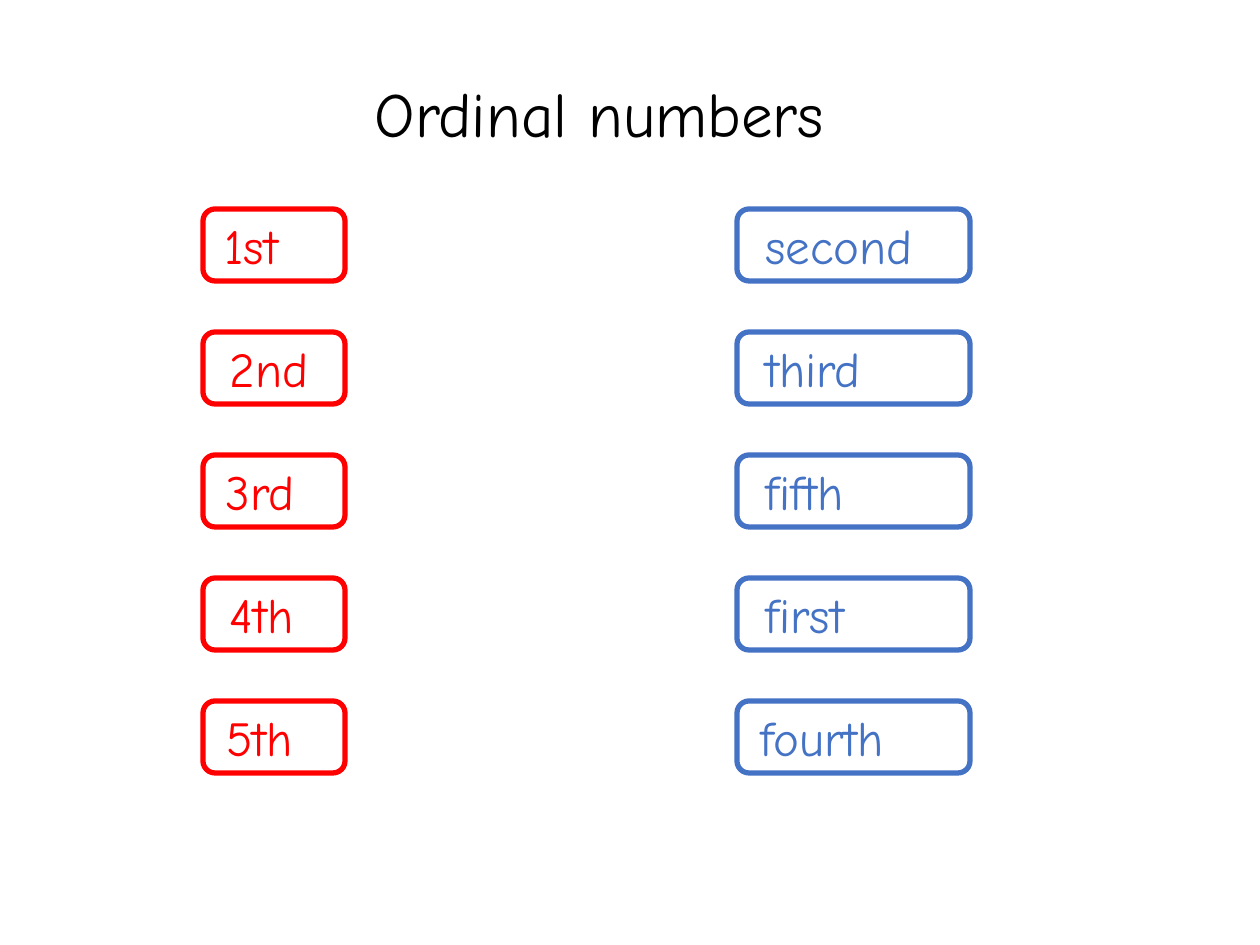
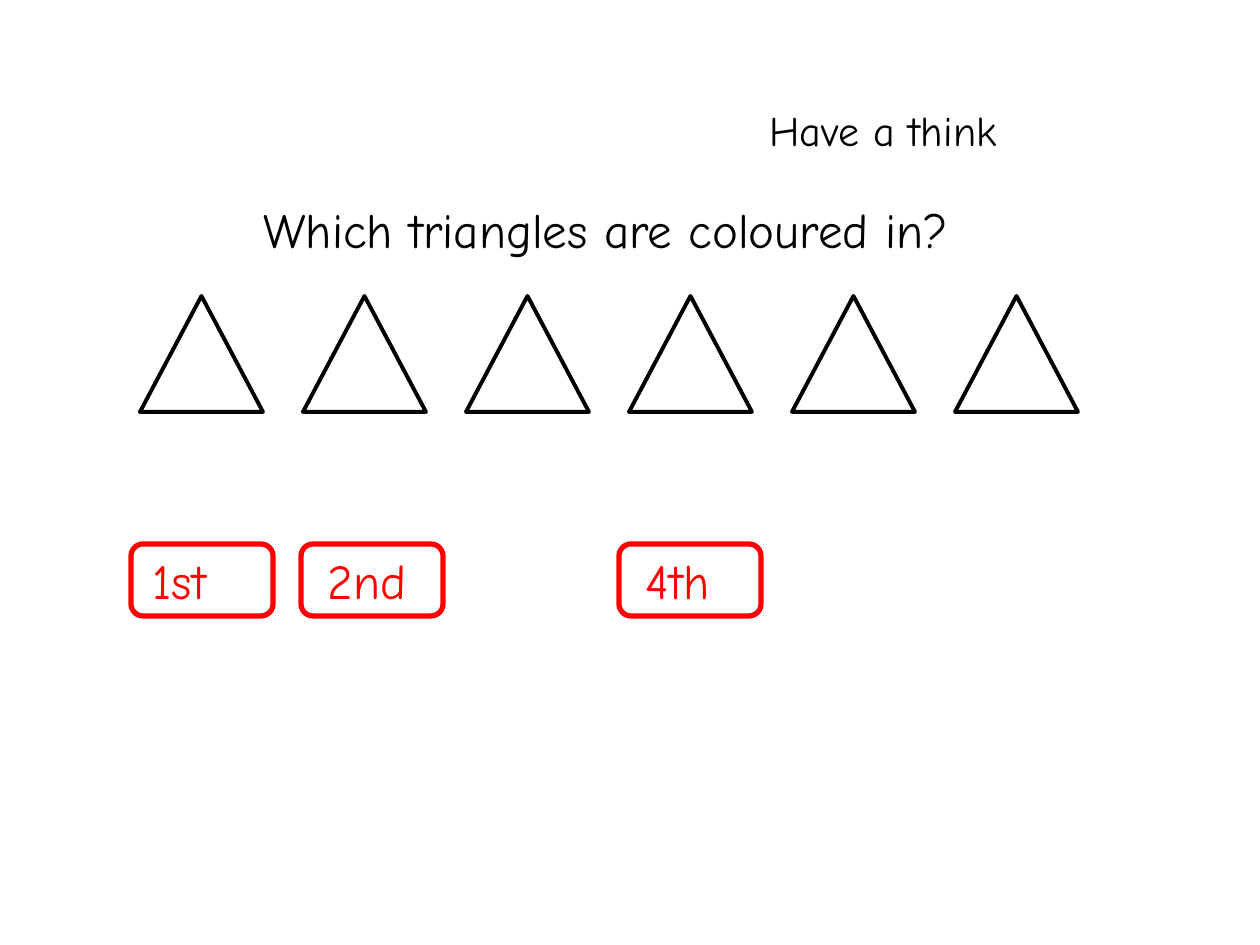
from pptx import Presentation
from pptx.dml.color import RGBColor
from pptx.enum.shapes import MSO_SHAPE as Shape
from pptx.enum.text import MSO_ANCHOR as Anchor, PP_ALIGN as Align
from pptx.util import Emu, Pt

FONT = "Comic Neue"
BLACK = RGBColor(0, 0, 0)
RED = RGBColor(255, 0, 0)
BLUE = RGBColor(0x44, 0x72, 0xC4)
SCALE = 914400 / 126  # EMU per px


def write(box, text, size, color, align):
    frame = box.text_frame
    frame.word_wrap = True
    line = frame.paragraphs[0]
    line.alignment = align
    run = line.add_run()
    run.text = text
    run.font.name = FONT
    run.font.size = Pt(size)
    run.font.color.rgb = color


def draw(slide, kind, rect, color, width):
    shape = slide.shapes.add_shape(kind, *[Emu(round(n * SCALE)) for n in rect])
    shape.shadow.inherit = False
    shape.fill.background()
    shape.line.color.rgb = color
    shape.line.width = Pt(width)
    return shape


deck = Presentation()
deck.slide_width = Emu(round(1260 * SCALE))
deck.slide_height = Emu(round(945 * SCALE))
match, think = [deck.slides.add_slide(deck.slide_layouts[6]) for _ in range(2)]

# Headings: slide, text, size, alignment, place
heads = [
    (match, "Ordinal numbers", 36, Align.CENTER, (174, 68, 851, 89)),
    (think, "Have a think", 24, Align.LEFT, (757, 98, 321, 63)),
    (think, "Which triangles are coloured in?", 28, Align.CENTER, (140, 193, 931, 72)),
]
for slide, text, size, align, rect in heads:
    box = slide.shapes.add_textbox(*[Emu(round(n * SCALE)) for n in rect])
    write(box, text, size, BLACK, align)

# Row of triangles
for i in range(6):
    draw(think, Shape.ISOSCELES_TRIANGLE, (140 + 163 * i, 296, 123, 116), BLACK, 2.25)

# Label cards: slide, text, left, top, width, text indent, colour
digits = [("1st", 18), ("2nd", 23), ("3rd", 19), ("4th", 23), ("5th", 20)]
words = [("second", 25), ("third", 25), ("fifth", 25), ("first", 25), ("fourth", 20)]
cards = []
for left, width, color, column in [(203, 142, RED, digits), (737, 233, BLUE, words)]:
    for row, (text, indent) in enumerate(column):
        cards.append((match, text, left, 209 + 123 * row, width, indent, color))
for left, n in [(131, 0), (301, 1), (619, 3)]:
    text, indent = digits[n]
    cards.append((think, text, left, 544, 142, indent, RED))

for slide, text, left, top, width, indent, color in cards:
    card = draw(slide, Shape.ROUNDED_RECTANGLE, (left, top, width, 72), color, 3)
    frame = card.text_frame
    frame.margin_left = Emu(round(indent * SCALE))
    frame.margin_right = 0
    frame.vertical_anchor = Anchor.MIDDLE
    write(card, text, 28, color, Align.LEFT)

deck.save("out.pptx")
